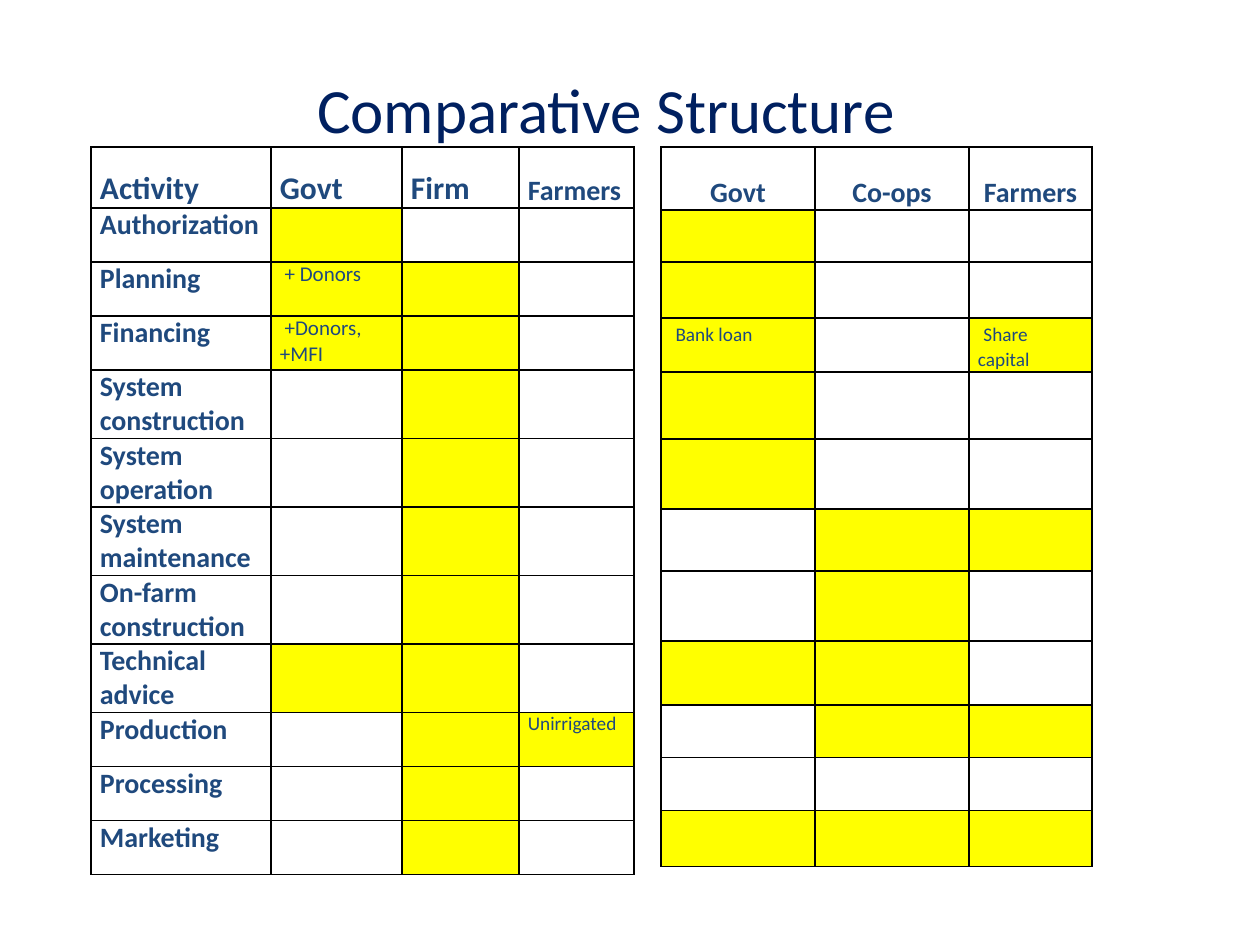
from dataclasses import dataclass

from lxml.etree import SubElement
from pptx import Presentation
from pptx.dml.color import RGBColor
from pptx.enum.text import MSO_ANCHOR, PP_ALIGN
from pptx.oxml.ns import qn
from pptx.util import Emu, Pt

PX = 914400 // 126
FONT = "Calibri"
NAVY, BLUE, YELLOW, BLACK = "002060", "1F497D", "FFFF00", "000000"


@dataclass
class Head:
    text: str
    width: int
    size: int = 16


@dataclass
class Note:
    row: int
    col: int
    text: str
    size: int
    lead: int = 0  # size of a leading space, if it differs


@dataclass
class Grid:
    left: int
    top: int
    heads: list[Head]
    rows: list[int]
    marks: list[str]  # one string per body row, "Y" is a yellow cell
    notes: list[Note]
    align: PP_ALIGN
    names: tuple[str, ...] = ()


def px(n: int) -> Emu:
    return Emu(n * PX)


def rgb(code: str) -> RGBColor:
    return RGBColor.from_string(code)


def style(para, size: int, bold: bool, color: str = BLUE) -> None:
    font = para.font
    font.name, font.size, font.bold = FONT, Pt(size), bold
    font.color.rgb = rgb(color)


def write(cell, text: str, size: int, bold: bool = True, lead: int = 0) -> None:
    para = cell.text_frame.paragraphs[0]
    if lead:
        gap = para.add_run()
        gap.text, gap.font.size = " ", Pt(lead)
    para.add_run().text = text
    style(para, size, bold)


def border(cell) -> None:
    props = cell._tc.get_or_add_tcPr()
    for i, side in enumerate(("lnL", "lnR", "lnT", "lnB")):
        line = props.makeelement(qn(f"a:{side}"), {"w": str(Pt(1))})
        fill = SubElement(line, qn("a:solidFill"))
        SubElement(fill, qn("a:srgbClr"), val=BLACK)
        props.insert(i, line)


def draw(slide, grid: Grid) -> None:
    wide, high = sum(h.width for h in grid.heads), sum(grid.rows)
    table = slide.shapes.add_table(
        len(grid.rows), len(grid.heads),
        px(grid.left), px(grid.top), px(wide), px(high)).table
    table.first_row = table.horz_banding = False
    for row, size in zip(table.rows, grid.rows):
        row.height = px(size)

    # Cell fills, insets and borders
    for r, marks in enumerate(["." * len(grid.heads)] + grid.marks):
        for c, mark in enumerate(marks):
            cell = table.cell(r, c)
            cell.margin_left = cell.margin_right = px(9)
            cell.margin_top = cell.margin_bottom = 0
            if mark == "Y":
                cell.fill.solid()
                cell.fill.fore_color.rgb = rgb(YELLOW)
            else:
                cell.fill.background()
            border(cell)

    # Headings, activity names and notes
    for c, head in enumerate(grid.heads):
        table.columns[c].width = px(head.width)
        cell = table.cell(0, c)
        cell.vertical_anchor = MSO_ANCHOR.BOTTOM
        write(cell, head.text, head.size)
        cell.text_frame.paragraphs[0].alignment = grid.align
    for r, name in enumerate(grid.names, 1):
        write(table.cell(r, 0), name, 16)
    for n in grid.notes:
        write(table.cell(n.row, n.col), n.text, n.size, False, n.lead)


FIRM = Grid(
    91, 147,
    [Head("Activity", 180, 18), Head("Govt", 131, 18),
     Head("Firm", 117, 18), Head("Farmers", 115)],
    [61] + [54] * 3 + [68] * 5 + [54] * 3,
    [".Y..", ".YY.", ".YY."] + ["..Y."] * 4
    + [".YY.", "..YY", "..Y.", "..Y."],
    [Note(2, 1, " + Donors", 12), Note(3, 1, " +Donors, +MFI", 12),
     Note(9, 3, "Unirrigated", 11)],
    PP_ALIGN.LEFT,
    ("Authorization", "Planning", "Financing", "System construction",
     "System operation", "System maintenance", "On-farm construction",
     "Technical advice", "Production", "Processing", "Marketing"),
)

COOP = Grid(
    661, 147,
    [Head("Govt", 154), Head("Co-ops", 154), Head("Farmers", 123)],
    [63, 52, 56, 54, 67, 70, 62, 70, 64, 53, 53, 56],
    ["Y..", "Y..", "Y.Y", "Y..", "Y..", ".YY",
     ".Y.", "YY.", ".YY", "...", "YYY"],
    [Note(3, 0, "Bank loan", 11, 14), Note(3, 2, "Share capital", 11, 14)],
    PP_ALIGN.CENTER,
)


def main() -> None:
    deck = Presentation()
    deck.slide_width, deck.slide_height = px(1260), px(945)
    slide = deck.slides.add_slide(deck.slide_layouts[5])

    # Title
    title = slide.shapes.title
    title.left, title.top = px(39), px(64)
    title.width, title.height = px(1134), px(125)
    frame = title.text_frame
    frame.text = "Comparative Structure"
    frame.vertical_anchor = MSO_ANCHOR.TOP
    para = frame.paragraphs[0]
    para.alignment = PP_ALIGN.CENTER
    style(para, 36, False, NAVY)

    # Side-by-side tables
    for grid in (FIRM, COOP):
        draw(slide, grid)
    deck.save("out.pptx")


if __name__ == "__main__":
    main()
